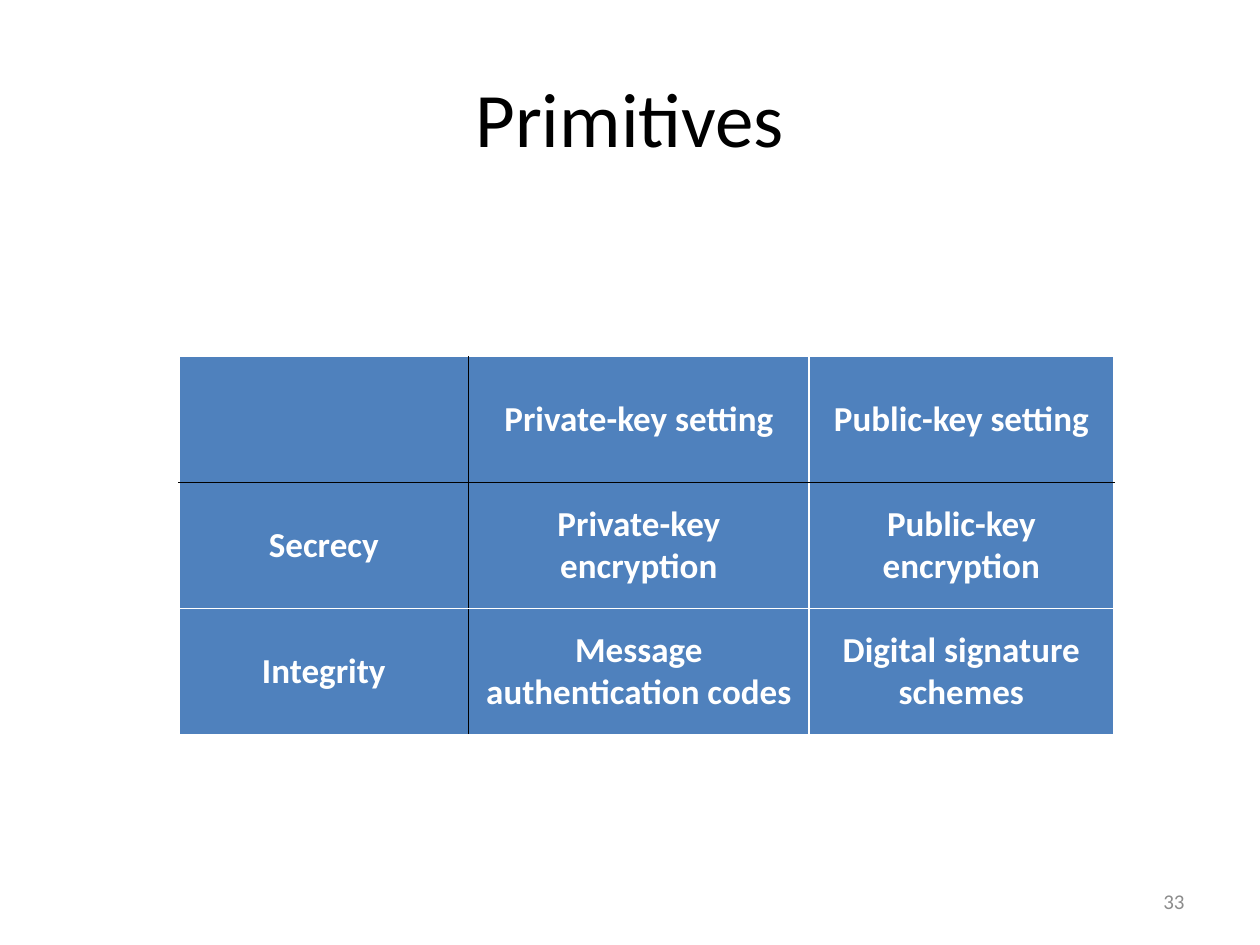
from lxml import etree
from pptx import Presentation
from pptx.dml.color import RGBColor
from pptx.enum.text import MSO_ANCHOR, PP_ALIGN
from pptx.oxml.ns import qn
from pptx.util import Inches, Pt

MIDDLE = MSO_ANCHOR.MIDDLE
CENTER, RIGHT = PP_ALIGN.CENTER, PP_ALIGN.RIGHT
BLACK = RGBColor(0x00, 0x00, 0x00)
WHITE = RGBColor(0xFF, 0xFF, 0xFF)
BLUE = RGBColor(0x4F, 0x81, 0xBD)
GRAY = RGBColor(0x8C, 0x8C, 0x8C)

WIDTHS = [2.3, 2.7, 2.42]
ROWS = [
    ["", "Private-key setting", "Public-key setting"],
    ["Secrecy", "Private-key encryption", "Public-key encryption"],
    ["Integrity", "Message authentication codes", "Digital signature schemes"],
]


class Deck:
    font = "Calibri"

    def __init__(self, slide):
        self.slide = slide

    def label(self, frame, text, size, color, align, bold=False):
        frame.word_wrap = True
        frame.vertical_anchor = MIDDLE
        line = frame.paragraphs[0]
        line.alignment = align
        run = line.add_run()
        run.text = text
        run.font.name = self.font
        run.font.size = Pt(size)
        run.font.bold = bold
        run.font.color.rgb = color

    def title(self, text, box):
        shape = self.slide.shapes.title
        shape.left, shape.top, shape.width, shape.height = map(Inches, box)
        self.label(shape.text_frame, text, 44, BLACK, CENTER)

    def number(self, text, box):
        shape = self.slide.shapes.add_textbox(*map(Inches, box))
        self.label(shape.text_frame, text, 12, GRAY, RIGHT)

    def border(self, cell, side, color):
        props = cell._tc.get_or_add_tcPr()
        line = etree.SubElement(props, qn(f"a:ln{side}"), w=str(Pt(1)))
        fill = etree.SubElement(line, qn("a:solidFill"))
        etree.SubElement(fill, qn("a:srgbClr"), val=str(color))

    def cell(self, cell, text, row, col):
        edges = {"L": col == 1, "R": col == 0, "T": row == 1, "B": row == 0}
        for side, dark in edges.items():
            self.border(cell, side, BLACK if dark else WHITE)
        cell.fill.solid()
        cell.fill.fore_color.rgb = BLUE
        cell.vertical_anchor = MIDDLE
        if text:
            self.label(cell.text_frame, text, 20, WHITE, CENTER, True)

    def table(self, rows, widths, left, top, height):
        box = map(Inches, (left, top, sum(widths), height * len(rows)))
        table = self.slide.shapes.add_table(len(rows), len(widths), *box).table
        for col, width in zip(table.columns, widths):
            col.width = Inches(width)
        for r, row in enumerate(rows):
            table.rows[r].height = Inches(height)
            for c, text in enumerate(row):
                self.cell(table.cell(r, c), text, r, c)


def main():
    prs = Presentation()
    prs.slide_width, prs.slide_height = Inches(10), Inches(7.5)
    deck = Deck(prs.slides.add_slide(prs.slide_layouts[5]))
    deck.title("Primitives", (0.5, 0.3, 9, 1.25))
    deck.table(ROWS, WIDTHS, 1.42, 2.83, 1)
    deck.number("33", (7.17, 6.95, 2.33, 0.4))
    prs.save("out.pptx")


if __name__ == "__main__":
    main()
